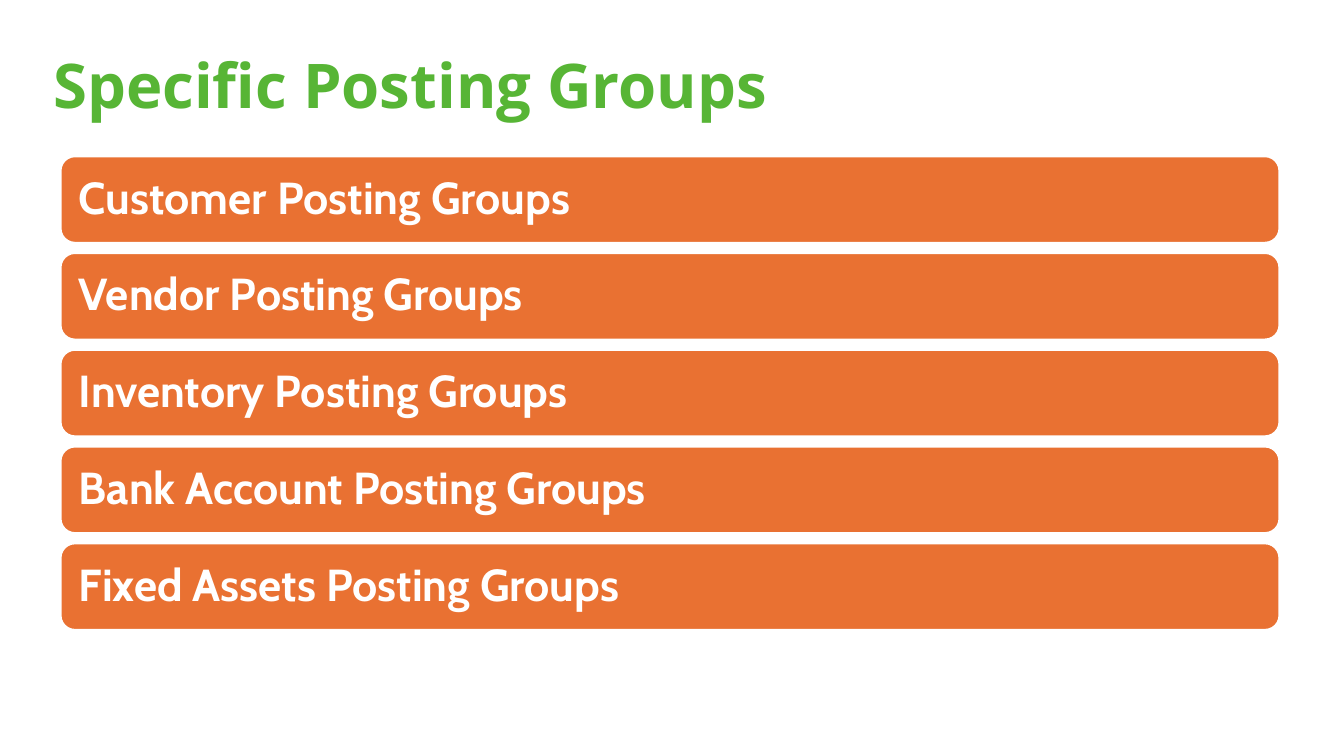
from pptx import Presentation
from pptx.dml.color import RGBColor
from pptx.enum.shapes import MSO_SHAPE
from pptx.enum.text import MSO_ANCHOR, PP_ALIGN
from pptx.util import Inches, Pt

TITLE = "Specific Posting Groups"
GROUPS = [
    "Customer Posting Groups",
    "Vendor Posting Groups",
    "Inventory Posting Groups",
    "Bank Account Posting Groups",
    "Fixed Assets Posting Groups",
]

WIDTH, HEIGHT = 13.33, 7.5
TITLE_AREA = (0.43, 0.4, 12.45, 0.96)
BAR_LEFT, BAR_TOP, BAR_WIDTH, BAR_HEIGHT = 0.6, 1.55, 12.09, 0.86
ROW_PITCH = 0.96
BAR_INSET = 0.14
GREEN, ORANGE, WHITE = "57B535", "E97132", "FFFFFF"
TITLE_FONT = {"name": "Open Sans", "size": Pt(44), "bold": True}
BAR_FONT = {"name": "Cabin", "size": Pt(32), "bold": True}
ROUNDED = MSO_SHAPE.ROUNDED_RECTANGLE
MIDDLE = MSO_ANCHOR.MIDDLE
LEFT = PP_ALIGN.LEFT


def color(value):
    return RGBColor.from_string(value)


def write(box, text, font, font_color):
    frame = box.text_frame
    frame.word_wrap = True
    frame.vertical_anchor = MIDDLE
    para = frame.paragraphs[0]
    para.alignment = LEFT
    para.line_spacing = 0.9
    span = para.add_run()
    span.text = text
    for name, value in font.items():
        setattr(span.font, name, value)
    span.font.color.rgb = color(font_color)


def add_bar(page, row, text):
    top = BAR_TOP + row * ROW_PITCH
    area = (BAR_LEFT, top, BAR_WIDTH, BAR_HEIGHT)
    bar = page.shapes.add_shape(ROUNDED, *map(Inches, area))
    bar.shadow.inherit = False
    bar.fill.solid()
    bar.fill.fore_color.rgb = color(ORANGE)
    bar.line.color.rgb = color(WHITE)
    bar.line.width = Pt(1.5)
    for side in ("left", "top", "right", "bottom"):
        setattr(bar.text_frame, f"margin_{side}", Inches(BAR_INSET))
    write(bar, text, BAR_FONT, WHITE)


def main():
    deck = Presentation()
    deck.slide_width, deck.slide_height = Inches(WIDTH), Inches(HEIGHT)
    page = deck.slides.add_slide(deck.slide_layouts[6])
    title = page.shapes.add_textbox(*map(Inches, TITLE_AREA))
    write(title, TITLE, TITLE_FONT, GREEN)
    for row, group in enumerate(GROUPS):
        add_bar(page, row, group)
    deck.save("out.pptx")


if __name__ == "__main__":
    main()
